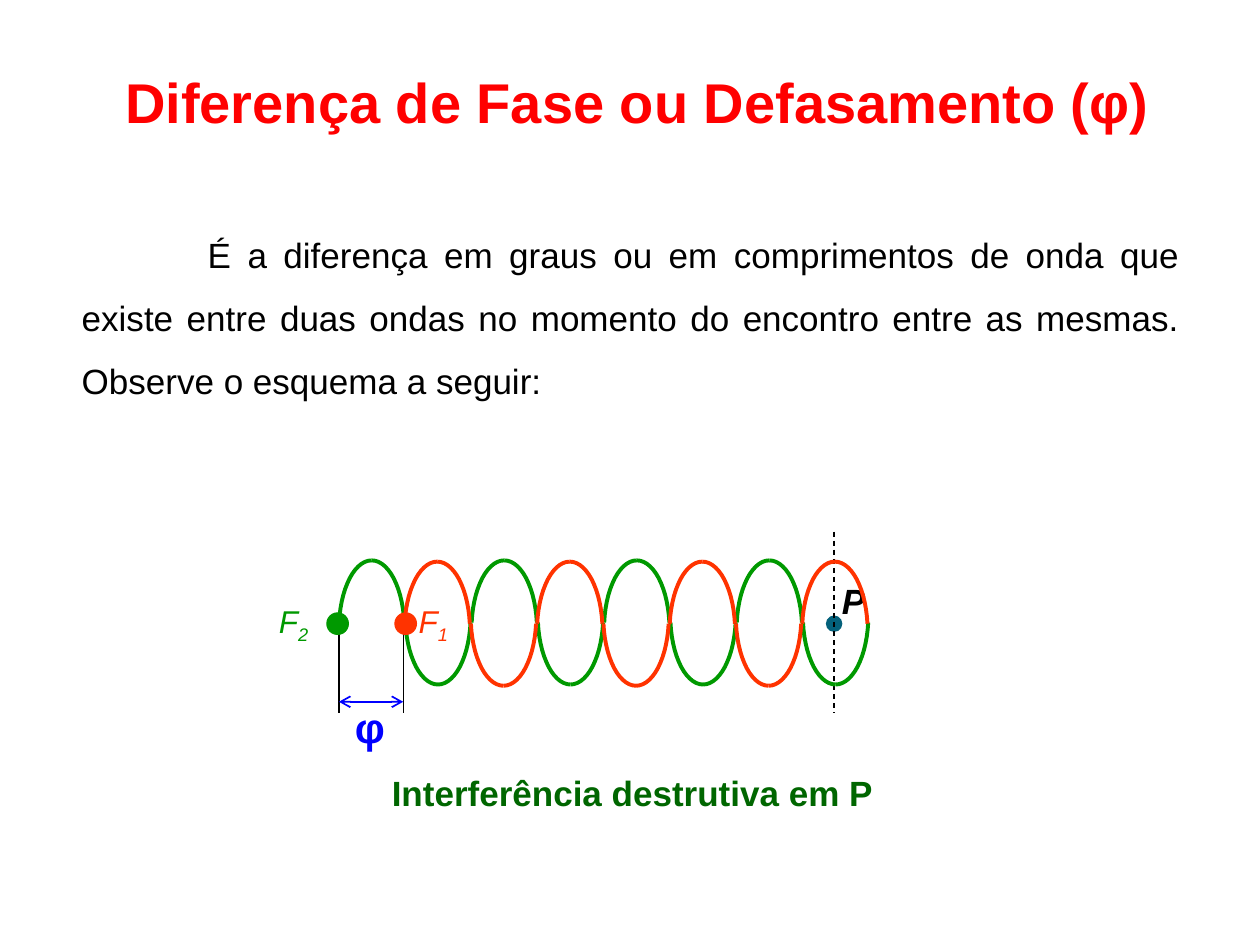
from math import cos, radians, sin

from lxml.etree import SubElement
from pptx import Presentation
from pptx.dml.color import RGBColor
from pptx.enum.dml import MSO_LINE
from pptx.enum.shapes import MSO_CONNECTOR, MSO_SHAPE
from pptx.enum.text import MSO_ANCHOR, PP_ALIGN
from pptx.oxml.ns import qn
from pptx.util import Inches, Pt

RED = RGBColor(0xFF, 0x00, 0x00)
ORANGE = RGBColor(0xFF, 0x33, 0x00)
GREEN = RGBColor(0x00, 0x99, 0x00)
DARK_GREEN = RGBColor(0x00, 0x66, 0x00)
BLUE = RGBColor(0x00, 0x00, 0xFF)
TEAL = RGBColor(0x04, 0x61, 0x7B)
BLACK = RGBColor(0x00, 0x00, 0x00)

TITLE = "Diferença de Fase ou Defasamento (φ)"
BODY = (
    "\tÉ a diferença em graus ou em comprimentos de onda que existe entre duas ondas "
    "no momento do encontro entre as mesmas. Observe o esquema a seguir:"
)
CAPTION = "Interferência destrutiva em P"
WAVES = [
    {"color": GREEN, "first_crest": 2.95, "arches": 8, "axis": 4.94,
     "source": 2.68, "label": "2", "label_left": 2.04},
    {"color": ORANGE, "first_crest": 3.47, "arches": 7, "axis": 4.95,
     "source": 3.22, "label": "1", "label_left": 3.15},
]
PITCH = 0.526
RADIUS_X, RADIUS_Y = 0.26, 0.55
SWEEP = 84
STEPS = 14
SOURCE_X, PHASE_X, MEETING_X = 2.69, 3.2, 6.62
GUIDE_BOTTOM = 5.66


def write_text(shape, text, size=20, color=BLACK, bold=False, italic=False,
               align=PP_ALIGN.CENTER, anchor=MSO_ANCHOR.TOP, inset=True,
               line_spacing=None, tab_stop=None, subscript=""):
    frame = shape.text_frame
    frame.word_wrap = True
    frame.vertical_anchor = anchor
    if not inset:
        frame.margin_left = frame.margin_right = 0
        frame.margin_top = frame.margin_bottom = 0
    paragraph = frame.paragraphs[0]
    paragraph.alignment = align
    if line_spacing:
        paragraph.line_spacing = line_spacing
    if tab_stop:
        tabs = SubElement(paragraph._p.get_or_add_pPr(), qn("a:tabLst"))
        SubElement(tabs, qn("a:tab"), pos=str(Inches(tab_stop)), algn="l")
    for content in filter(None, (text, subscript)):
        run = paragraph.add_run()
        run.text = content
        run.font.name = "Arial"
        run.font.size = Pt(size)
        run.font.bold = bold
        run.font.italic = italic
        run.font.color.rgb = color
    if subscript:
        run._r.get_or_add_rPr().set("baseline", "-25000")


def add_text(slide, left, top, width, height, text, **text_format):
    box = slide.shapes.add_textbox(*map(Inches, (left, top, width, height)))
    write_text(box, text, **text_format)


def add_line(slide, start, end, color=BLACK, width=0.75, dash=None, arrows=False):
    line = slide.shapes.add_connector(MSO_CONNECTOR.STRAIGHT, *map(Inches, start + end))
    line.line.color.rgb = color
    line.line.width = Pt(width)
    if dash:
        line.line.dash_style = dash
    if arrows:
        for tag in ("a:headEnd", "a:tailEnd"):
            SubElement(line.line._get_or_add_ln(), qn(tag), type="arrow")
    SubElement(line._element.spPr, qn("a:effectLst"))


def add_dot(slide, center_x, center_y, diameter, color):
    corner = (center_x - diameter / 2, center_y - diameter / 2)
    dot = slide.shapes.add_shape(
        MSO_SHAPE.OVAL, *map(Inches, corner + (diameter, diameter)))
    dot.shadow.inherit = False
    dot.fill.solid()
    dot.fill.fore_color.rgb = color
    dot.line.color.rgb = color
    dot.line.width = Pt(0.75)


def add_quarter_arc(slide, crest_x, axis_y, side, direction, color):
    angles = [radians(SWEEP * step / STEPS) for step in range(STEPS + 1)]
    points = [
        (Inches(crest_x + side * RADIUS_X * sin(angle)),
         Inches(axis_y - direction * RADIUS_Y * (cos(angle) - cos(angles[-1]))))
        for angle in angles
    ]
    builder = slide.shapes.build_freeform(*points[0])
    builder.add_line_segments(points[1:], close=False)
    arc = builder.convert_to_shape()
    arc.shadow.inherit = False
    arc.fill.background()
    arc.line.color.rgb = color
    arc.line.width = Pt(2.25)


def add_wave(slide, wave):
    for arch in range(wave["arches"]):
        for side in (1, -1):
            add_quarter_arc(slide, wave["first_crest"] + arch * PITCH, wave["axis"],
                            side, (-1) ** arch, wave["color"])
    add_dot(slide, wave["source"], 4.95, 0.17, wave["color"])
    add_text(slide, wave["label_left"], 4.73, 0.58, 0.4, "F", size=18,
             color=wave["color"], italic=True, subscript=wave["label"])


def main():
    presentation = Presentation()
    presentation.slide_width, presentation.slide_height = Inches(10), Inches(7.5)
    slide = presentation.slides.add_slide(presentation.slide_layouts[5])

    title = slide.shapes.title
    title.left, title.top, title.width, title.height = map(
        Inches, (0.52, 0.26, 9.08, 1.08))
    write_text(title, TITLE, size=32, color=RED, bold=True, anchor=MSO_ANCHOR.MIDDLE)

    add_dot(slide, MEETING_X, 4.95, 0.12, TEAL)
    add_text(slide, 6.63, 4.6, 0.29, 0.33, "P", bold=True, italic=True, inset=False)
    add_line(slide, (MEETING_X, 4.22), (MEETING_X, GUIDE_BOTTOM), dash=MSO_LINE.DASH)

    add_text(slide, 2.66, 5.57, 0.55, 0.4, "φ", size=24, color=BLUE, bold=True,
             inset=False)
    for guide_x in (SOURCE_X, PHASE_X):
        add_line(slide, (guide_x, 4.95), (guide_x, GUIDE_BOTTOM))
    add_line(slide, (SOURCE_X, 5.57), (PHASE_X, 5.57), color=BLUE, width=1, arrows=True)

    for wave in WAVES:
        add_wave(slide, wave)

    add_text(slide, 2.71, 6.07, 4.62, 0.43, CAPTION, color=DARK_GREEN, bold=True)
    add_text(slide, 0.55, 1.64, 8.91, 1.62, BODY, align=PP_ALIGN.JUSTIFY,
             line_spacing=1.5, tab_stop=1)
    presentation.save("out.pptx")


if __name__ == "__main__":
    main()
